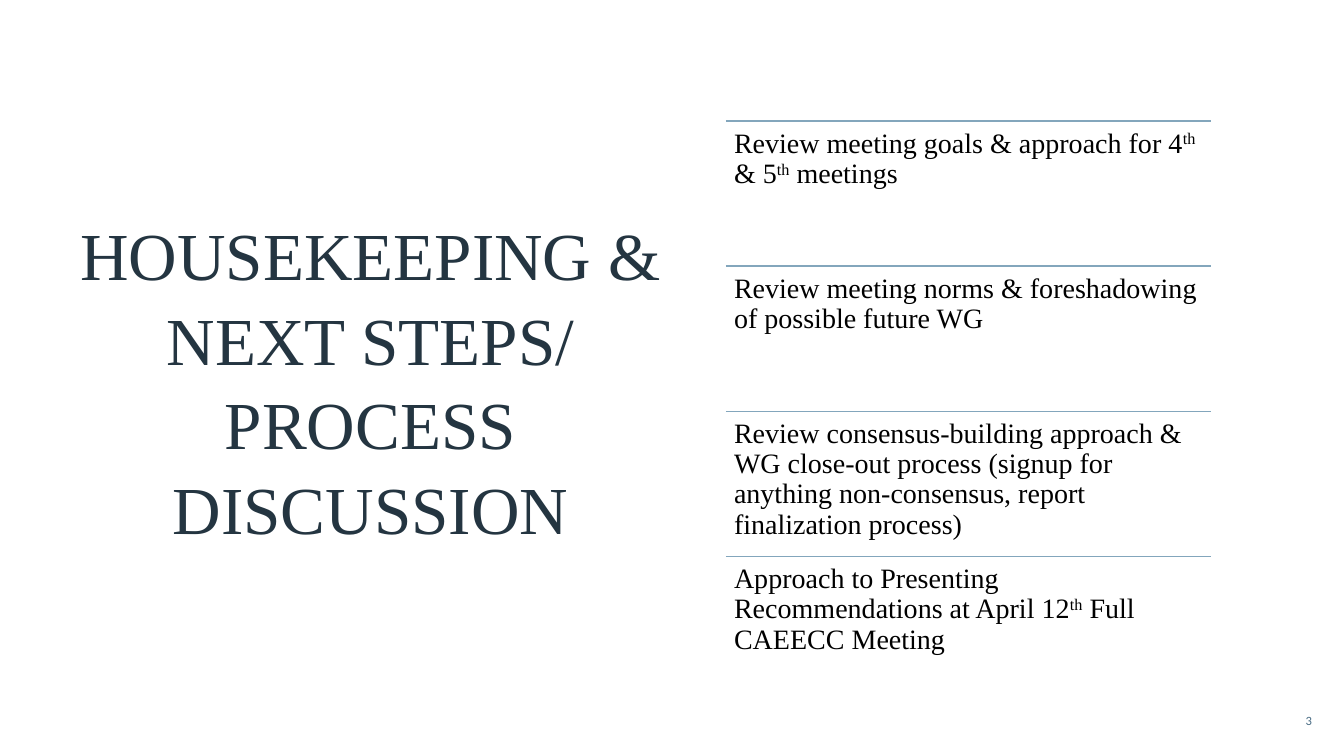
from pptx import Presentation
from pptx.dml.color import RGBColor
from pptx.enum.shapes import MSO_CONNECTOR
from pptx.enum.text import MSO_ANCHOR, PP_ALIGN
from pptx.oxml.ns import qn
from pptx.util import Inches, Pt
from lxml import etree

NAVY = RGBColor(0x24, 0x35, 0x41)
RULE_BLUE = RGBColor(0x83, 0xA6, 0xBC)
NUMBER_BLUE = RGBColor(0x48, 0x6B, 0x83)
BLACK = RGBColor(0, 0, 0)
SERIF = "Times New Roman"

LIST_LEFT, LIST_TOP = 7.2, 1.2
LIST_WIDTH, ROW_HEIGHT = 4.81, 1.44

# Each item alternates between normal text and superscript text.
AGENDA = [
    ["Review meeting goals & approach for 4", "th", " & 5", "th", " meetings"],
    ["Review meeting norms & foreshadowing of possible future WG"],
    ["Review consensus-building approach & WG close-out process "
     "(signup for anything non-consensus, report finalization process)"],
    ["Approach to Presenting Recommendations at April 12", "th",
     " Full CAEECC Meeting"],
]


def add_text_box(left, top, width, height, anchor=MSO_ANCHOR.TOP):
    """Add a wrapping text box and return its text frame."""
    box = slide.shapes.add_textbox(
        Inches(left), Inches(top), Inches(width), Inches(height))
    box.text_frame.word_wrap = True
    box.text_frame.vertical_anchor = anchor
    return box.text_frame


def format_run(run, size, color, font_name=SERIF):
    run.font.name = font_name
    run.font.size = Pt(size)
    run.font.color.rgb = color


presentation = Presentation()
presentation.slide_width = Inches(13.33)
presentation.slide_height = Inches(7.5)
slide = presentation.slides.add_slide(presentation.slide_layouts[6])

# Title
title = add_text_box(0.3, 1.09, 6.75, 5.33, MSO_ANCHOR.MIDDLE)
title.text = "HOUSEKEEPING & NEXT STEPS/ PROCESS DISCUSSION"
paragraph = title.paragraphs[0]
paragraph.alignment = PP_ALIGN.CENTER
paragraph.line_spacing = 1.05
paragraph.space_before = Pt(10)
format_run(paragraph.runs[0], 48, NAVY)

# Agenda rows, each under a thin rule
for row, pieces in enumerate(AGENDA):
    top = LIST_TOP + row * ROW_HEIGHT
    rule = slide.shapes.add_connector(
        MSO_CONNECTOR.STRAIGHT, Inches(LIST_LEFT), Inches(top),
        Inches(LIST_LEFT + LIST_WIDTH), Inches(top))
    rule.line.color.rgb = RULE_BLUE
    rule.line.width = Pt(1)
    etree.SubElement(rule._element.spPr, qn("a:effectLst"))

    item = add_text_box(LIST_LEFT, top, LIST_WIDTH, ROW_HEIGHT)
    item.margin_left = item.margin_right = Inches(0.08)
    item.margin_top = item.margin_bottom = Inches(0.08)
    paragraph = item.paragraphs[0]
    paragraph.line_spacing = 0.9
    for position, piece in enumerate(pieces):
        run = paragraph.add_run()
        run.text = piece
        format_run(run, 20, BLACK)
        if position % 2 == 1:
            run._r.get_or_add_rPr().set("baseline", "30000")

# Slide number
number = add_text_box(12.16, 6.95, 0.95, 0.4, MSO_ANCHOR.MIDDLE)
number.text = "3"
paragraph = number.paragraphs[0]
paragraph.alignment = PP_ALIGN.RIGHT
format_run(paragraph.runs[0], 9, NUMBER_BLUE, "Calibri")

presentation.save("out.pptx")
